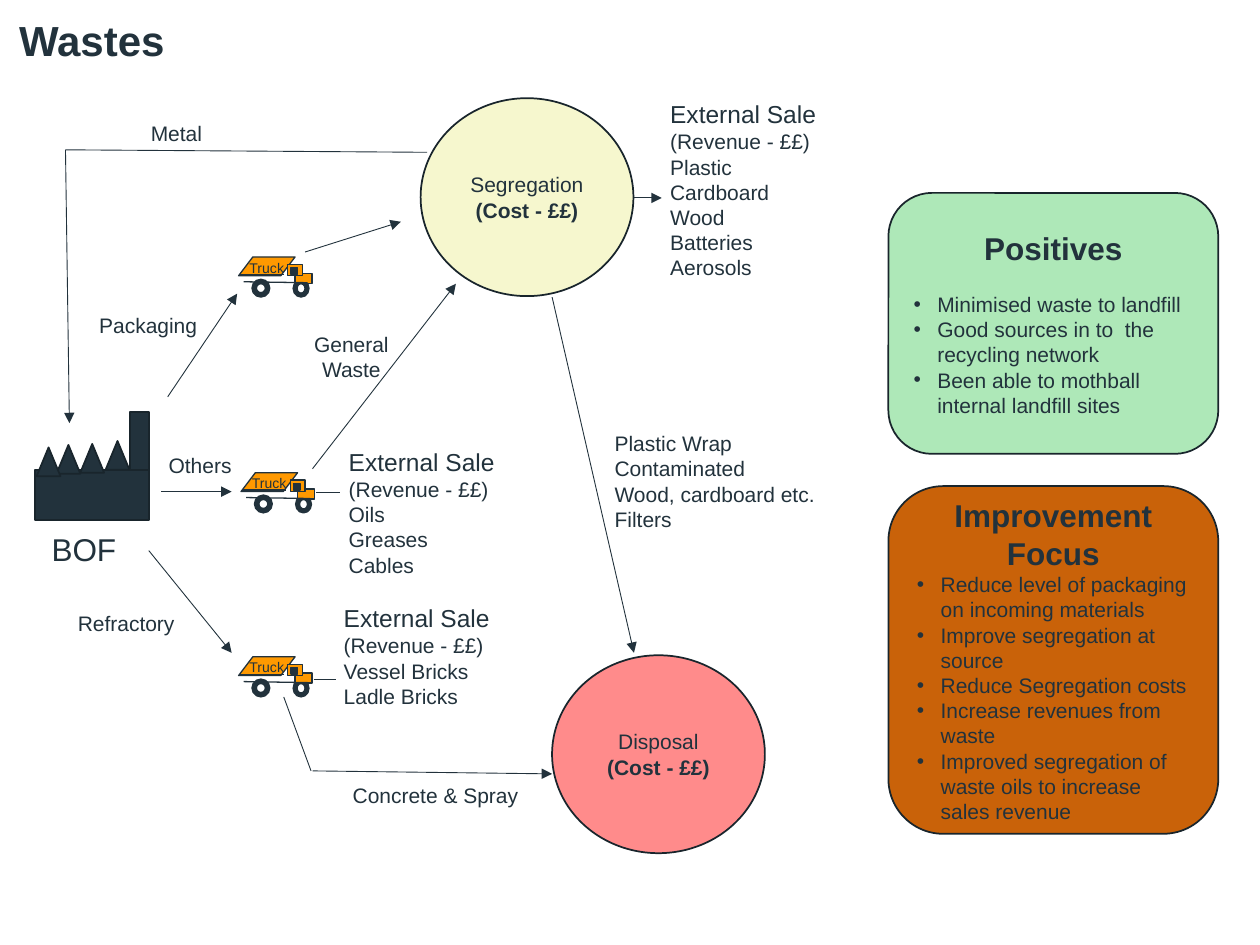
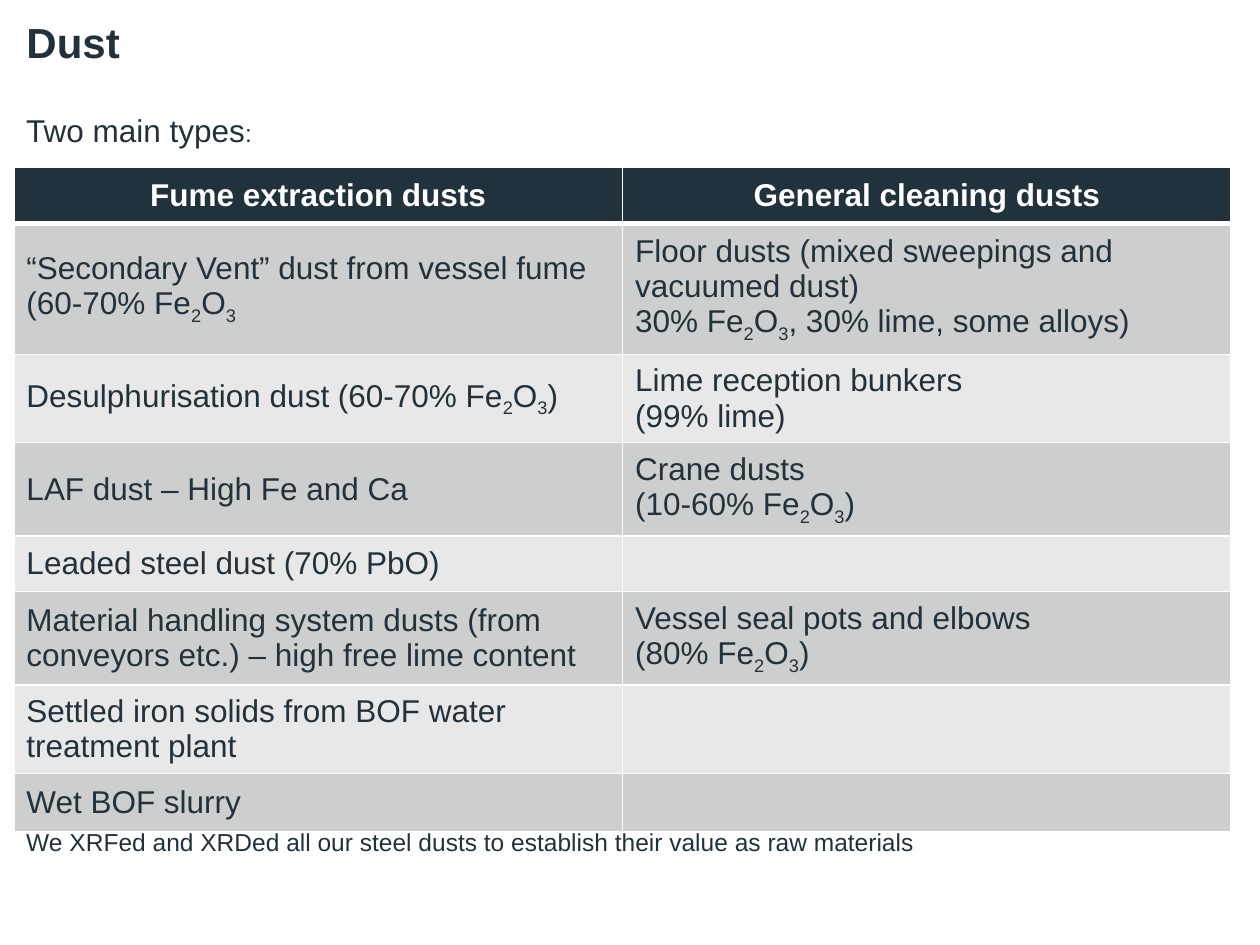
from collections import namedtuple
from dataclasses import dataclass

from lxml import etree
from pptx import Presentation
from pptx.dml.color import RGBColor
from pptx.enum.shapes import MSO_CONNECTOR, MSO_SHAPE
from pptx.enum.text import MSO_ANCHOR, MSO_AUTO_SIZE, PP_ALIGN
from pptx.oxml.ns import qn
from pptx.util import Cm, Pt

LEFT, CENTER = PP_ALIGN.LEFT, PP_ALIGN.CENTER
TOP, MIDDLE = MSO_ANCHOR.TOP, MSO_ANCHOR.MIDDLE
NO_AUTOFIT = MSO_AUTO_SIZE.NONE
STRAIGHT = MSO_CONNECTOR.STRAIGHT
RECT, OVAL, TRIANGLE = MSO_SHAPE.RECTANGLE, MSO_SHAPE.OVAL, MSO_SHAPE.ISOSCELES_TRIANGLE
DONUT, PARALLELOGRAM = MSO_SHAPE.DONUT, MSO_SHAPE.PARALLELOGRAM
ROUNDED = MSO_SHAPE.ROUNDED_RECTANGLE


@dataclass(frozen=True)
class Theme:
    font: str = "Arial"
    ink: str = "22323C"
    outline: str = "19252C"
    white: str = "FFFFFF"
    truck: str = "FF9900"
    segregation: str = "F6F7CE"
    disposal: str = "FF8B8B"
    positives: str = "AEE8B8"
    improvement: str = "C96209"
    row_dark: str = "CDCECE"
    row_light: str = "E8E8E8"
    title: int = 24
    heading: int = 18
    subheading: int = 14
    body: int = 12
    tiny: int = 8


THEME = Theme()
Box = namedtuple("Box", "left top width height")
Line = namedtuple("Line", "text size bold bullet", defaults=(THEME.body, False, False))


# ---- Shared helpers ----
def to_cm(values):
    return [Cm(value) for value in values]


def within(box, left, top, width, height):
    return Box(box.left + left, box.top + top, width, height)


def apply_format(target, **values):
    for name, value in values.items():
        setattr(target, name, value)


def add_run(paragraph, text, size, bold=False, colour=THEME.ink):
    run = paragraph.add_run()
    run.text = text
    apply_format(run.font, name=THEME.font, size=Pt(size), bold=bold)
    run.font.color.rgb = RGBColor.from_string(colour)
    return run


def add_bullet(paragraph, indent=0.48):
    properties = paragraph._p.get_or_add_pPr()
    properties.set("marL", str(Cm(indent)))
    properties.set("indent", str(-Cm(indent)))
    etree.SubElement(properties, qn("a:buFont")).set("typeface", THEME.font)
    etree.SubElement(properties, qn("a:buChar")).set("char", "•")


def write_lines(frame, lines, align=LEFT):
    for index, line in enumerate(lines):
        paragraph = frame.add_paragraph() if index else frame.paragraphs[0]
        paragraph.alignment = LEFT if line.bullet else align
        if line.bullet:
            add_bullet(paragraph)
        add_run(paragraph, line.text, line.size, line.bold)


def add_label(slide, box, lines, align=LEFT, wrap=False):
    frame = slide.shapes.add_textbox(*to_cm(box)).text_frame
    apply_format(frame, word_wrap=wrap, vertical_anchor=TOP)
    write_lines(frame, lines, align)
    return frame


def add_block(slide, preset, box, fill, outline=THEME.outline, weight=1, adjust=None):
    block = slide.shapes.add_shape(preset, *to_cm(box))
    block.shadow.inherit = False
    block.fill.solid()
    block.fill.fore_color.rgb = RGBColor.from_string(fill)
    block.line.color.rgb = RGBColor.from_string(outline)
    block.line.width = Pt(weight)
    if adjust is not None:
        block.adjustments[0] = adjust
    return block


def add_text_block(slide, preset, box, fill, lines):
    frame = add_block(slide, preset, box, fill).text_frame
    apply_format(frame, word_wrap=True, vertical_anchor=MIDDLE)
    write_lines(frame, lines, CENTER)
    return frame


def add_link(slide, ends, weight=0.5, arrow=False):
    link = slide.shapes.add_connector(STRAIGHT, *to_cm(ends))
    link.line.color.rgb = RGBColor.from_string(THEME.ink)
    link.line.width = Pt(weight)
    if arrow:
        etree.SubElement(link.line._get_or_add_ln(), qn("a:tailEnd")).set("type", "triangle")
    etree.SubElement(link._element.spPr, qn("a:effectLst"))


def add_titled_slide(deck, title, left, top):
    slide = deck.slides.add_slide(deck.slide_layouts[5])
    heading = slide.shapes.title
    box = Box(left, top, 23.5, 1.52)
    apply_format(heading, **dict(zip(box._fields, to_cm(box))))
    frame = heading.text_frame
    apply_format(frame, word_wrap=True, vertical_anchor=MIDDLE, auto_size=NO_AUTOFIT)
    apply_format(frame.paragraphs[0], alignment=LEFT, line_spacing=0.9)
    add_run(frame.paragraphs[0], title, THEME.title, True)
    return slide


# ---- Waste flow drawings ----
def draw_truck(slide, box):
    def part(preset, area, fill=THEME.truck, adjust=None):
        add_block(slide, preset, within(box, *area), fill, THEME.ink, 0.75, adjust)

    # Wheels, bonnet and load bed
    for wheel in ((0.3, 0.53, 0.36, 0.36), (1.13, 0.54, 0.32, 0.35)):
        part(DONUT, wheel, THEME.ink, 0.25)
    part(RECT, (1.17, 0.41, 0.34, 0.2))
    part(PARALLELOGRAM, (0.03, 0.08, 1.14, 0.38), adjust=0.76)

    caption = add_label(slide, within(box, 0, 0, 1.22, 0.58), [Line("Truck", THEME.tiny)], wrap=True)
    caption.margin_right = 0

    # Chassis and bed lines
    for x1, y1, x2, y2 in ((0.13, 0.58, 1.42, 0.6), (0.05, 0.43, 0.94, 0.43)):
        add_link(slide, (box.left + x1, box.top + y1, box.left + x2, box.top + y2), 0.75)

    # Cab and window
    part(RECT, (1.02, 0.23, 0.3, 0.23))
    part(RECT, (1.09, 0.3, 0.13, 0.13), THEME.ink)


def draw_factory(slide, box):
    chimney_height = 1.17
    add_block(slide, RECT, within(box, 0, chimney_height, box.width, box.height - chimney_height), THEME.ink)
    add_block(slide, RECT, within(box, box.width - 0.38, 0, 0.38, chimney_height), THEME.ink)
    for left, top in ((1.42, 0.58), (0.91, 0.64), (0.43, 0.66), (0.03, 0.71)):
        add_block(slide, TRIANGLE, within(box, left, top, 0.48, 0.58), THEME.ink)
    add_label(slide, within(box, 0.08, 2.26, 1.83, 1.02), [Line("BOF", THEME.heading)])


def draw_stage(slide, box, name, fill):
    add_text_block(slide, OVAL, box, fill, [Line(name), Line("(Cost - ££)", bold=True)])


def draw_sale(slide, box, goods):
    header = [Line("External Sale", THEME.subheading), Line("(Revenue - ££)")]
    add_label(slide, box, header + [Line(item) for item in goods])


def draw_panel(slide, box, heading, points, fill, gap=0):
    lines = [Line(heading, THEME.heading, True)] + [Line(point, bullet=True) for point in points]
    frame = add_text_block(slide, ROUNDED, box, fill, lines)
    frame.paragraphs[1].space_before = Pt(gap)


STREAMS = [
    (Box(1.75, 6.17, 2.49, 0.76), ["Packaging"], LEFT),
    (Box(3.15, 8.99, 1.8, 0.76), ["Others"], LEFT),
    (Box(1.32, 12.19, 2.49, 0.76), ["Refractory"], LEFT),
    (Box(2.79, 2.31, 1.55, 0.76), ["Metal"], LEFT),
    (Box(6.07, 6.55, 2.03, 1.27), ["General", "Waste"], CENTER),
    (Box(6.86, 15.65, 3.89, 0.76), ["Concrete & Spray"], LEFT),
    (Box(12.14, 8.56, 4.57, 2.31),
     ["Plastic Wrap", "Contaminated", "Wood, cardboard etc.", "Filters"], LEFT),
]
SALES = [
    (Box(13.26, 1.88, 3.48, 3.94), ["Plastic", "Cardboard", "Wood", "Batteries", "Aerosols"]),
    (Box(6.78, 8.89, 3.48, 2.9), ["Oils", "Greases", "Cables"]),
    (Box(6.68, 12.04, 3.48, 2.39), ["Vessel Bricks", "Ladle Bricks"]),
]
ARROWS = [
    (3.38, 8, 4.78, 5.92),         # BOF to packaging truck
    (6.15, 5.08, 8.08, 4.47),      # packaging truck to segregation
    (3.25, 9.91, 4.67, 9.91),      # BOF to others truck
    (3, 11.1, 4.67, 13.16),        # BOF to refractory truck
    (12.78, 3.99, 13.34, 3.99),    # segregation to sale
    (6.3, 9.45, 9.19, 5.72),       # general waste to segregation
    (11.13, 5.99, 12.78, 13.16),   # segregation to disposal
    (6.3, 15.54, 11.13, 15.6),     # concrete to disposal
    (1.32, 3.02, 1.4, 8.53),       # metal back to BOF
]
PLAIN_LINKS = [
    (6.38, 9.93, 6.86, 9.93),      # others truck to sale
    (6.32, 13.69, 6.78, 13.69),    # refractory truck to sale
    (5.72, 14.05, 6.27, 15.54),    # refractory truck to concrete
    (8.61, 3.07, 1.32, 3.02),      # metal out of segregation
]
POSITIVES = [
    "Minimised waste to landfill",
    "Good sources in to  the recycling network",
    "Been able to mothball internal landfill sites",
]
IMPROVEMENTS = [
    "Reduce level of packaging on incoming materials",
    "Improve segregation at source",
    "Reduce Segregation costs",
    "Increase revenues from waste",
    "Improved segregation of waste oils to increase sales revenue",
]


def build_wastes(deck):
    slide = add_titled_slide(deck, "Wastes", 0.13, 0.1)
    # Source, transport and stages
    for left, top in ((4.78, 5.1), (4.78, 13.16), (4.83, 9.45)):
        draw_truck(slide, Box(left, top, 1.52, 0.9))
    draw_factory(slide, Box(0.71, 8.31, 2.29, 2.18))
    draw_stage(slide, Box(8.48, 1.98, 4.29, 3.99), "Segregation", THEME.segregation)
    draw_stage(slide, Box(11.13, 13.21, 4.29, 3.99), "Disposal", THEME.disposal)
    # Flows
    for ends in ARROWS:
        add_link(slide, ends, arrow=True)
    for ends in PLAIN_LINKS:
        add_link(slide, ends)
    for box, words, align in STREAMS:
        add_label(slide, box, [Line(word) for word in words], align)
    for box, goods in SALES:
        draw_sale(slide, box, goods)
    # Assessment
    draw_panel(slide, Box(17.91, 3.89, 6.65, 5.26), "Positives", POSITIVES, THEME.positives, 14)
    draw_panel(slide, Box(17.91, 9.8, 6.65, 7.01), "Improvement Focus", IMPROVEMENTS, THEME.improvement)


# ---- Dust table: "_" puts the next character in subscript ----
DUST_ROWS = [
    (1.12, "Fume extraction dusts", "General cleaning dusts"),
    (2.51, "“Secondary Vent” dust from vessel fume (60-70% Fe_2O_3",
     "Floor dusts (mixed sweepings and vacuumed dust)\n30% Fe_2O_3, 30% lime, some alloys)"),
    (1.75, "Desulphurisation dust (60-70% Fe_2O_3)", "Lime reception bunkers\n(99% lime)"),
    (1.75, "LAF dust – High Fe and Ca", "Crane dusts\n(10-60% Fe_2O_3)"),
    (1.12, "Leaded steel dust (70% PbO)", ""),
    (1.75, "Material handling system dusts (from conveyors etc.) – high free lime content",
     "Vessel seal pots and elbows\n(80% Fe_2O_3)"),
    (1.75, "Settled iron solids from BOF water treatment plant", ""),
    (1.17, "Wet BOF slurry", ""),
]


def write_formula(paragraph, text, **style):
    for line_index, line in enumerate(text.split("\n")):
        if line_index:
            paragraph.add_line_break()
        for index, chunk in enumerate(line.split("_")):
            if index:
                subscript = add_run(paragraph, chunk[0], THEME.heading, **style)
                subscript._r.get_or_add_rPr().set("baseline", "-25000")
                chunk = chunk[1:]
            if chunk:
                add_run(paragraph, chunk, THEME.heading, **style)


def set_borders(cell, weights):
    properties = cell._tc.get_or_add_tcPr()
    for position, (side, weight) in enumerate(weights.items()):
        border = etree.Element(qn(f"a:ln{side}"), w=str(Pt(weight)))
        solid = etree.SubElement(border, qn("a:solidFill"))
        etree.SubElement(solid, qn("a:srgbClr")).set("val", THEME.white)
        properties.insert(position, border)


def draw_dust_table(slide, box):
    table = slide.shapes.add_table(len(DUST_ROWS), 2, *to_cm(box)).table
    apply_format(table, first_row=False, horz_banding=False)
    for column in table.columns:
        column.width = Cm(box.width / 2)
    for index, (height, *texts) in enumerate(DUST_ROWS):
        table.rows[index].height = Cm(height)
        header = index == 0
        band = THEME.row_dark if index % 2 else THEME.row_light
        for cell, text in zip(table.rows[index].cells, texts):
            cell.vertical_anchor = MIDDLE
            cell.fill.solid()
            cell.fill.fore_color.rgb = RGBColor.from_string(THEME.ink if header else band)
            set_borders(cell, {"L": 1, "R": 1, "T": 3 if index == 1 else 1, "B": 3 if header else 1})
            paragraph = cell.text_frame.paragraphs[0]
            paragraph.alignment = CENTER if header else LEFT
            write_formula(paragraph, text, bold=header, colour=THEME.white if header else THEME.ink)


def build_dust(deck):
    slide = add_titled_slide(deck, "Dust", 0.28, 0.15)
    intro = add_label(slide, Box(0.28, 2.11, 24.54, 1.02), [Line("Two main types", THEME.heading)], wrap=True)
    add_run(intro.paragraphs[0], ":", THEME.subheading)
    draw_dust_table(slide, Box(0.28, 3.38, 24.54, 13.08))
    closing = "We XRFed and XRDed all our steel dusts to establish their value as raw materials"
    add_label(slide, Box(0.28, 16.54, 24.54, 0.85), [Line(closing, THEME.subheading)], wrap=True)


def main():
    deck = Presentation()
    apply_format(deck, slide_width=Cm(25.4), slide_height=Cm(19.05))
    build_wastes(deck)
    build_dust(deck)
    deck.save("out.pptx")


if __name__ == "__main__":
    main()
